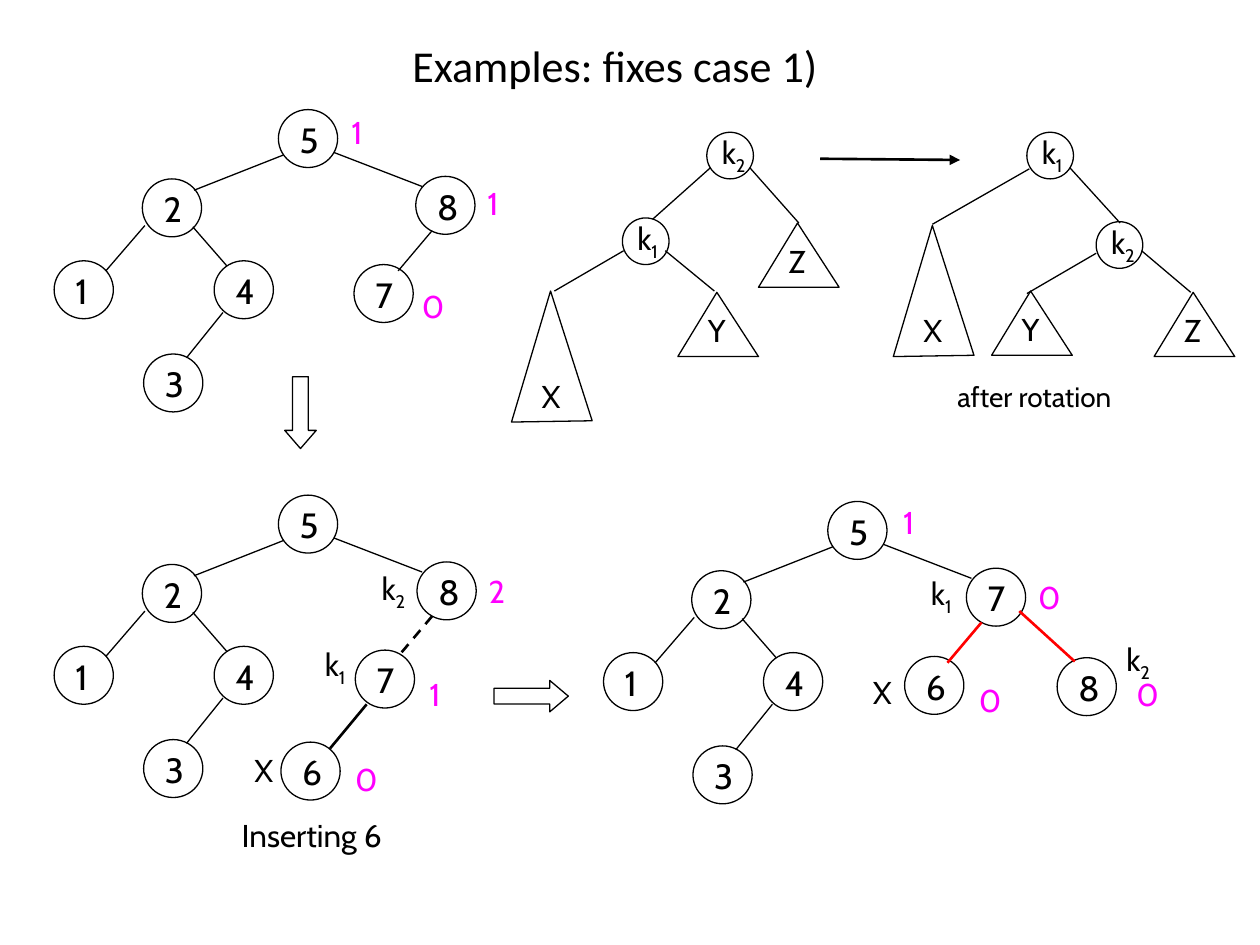
import pptx
import pptx.util
import pptx.dml.color
import pptx.enum.dml
import pptx.enum.shapes
import pptx.enum.text
import lxml.etree

KIND = pptx.enum.shapes.MSO_SHAPE
DASH = pptx.enum.dml.MSO_LINE.DASH
TEXT = pptx.enum.text
A = "{http://schemas.openxmlformats.org/drawingml/2006/main}"


class Theme:
    ink, mark, hot = "000000", "FF00FF", "FF0000"
    head, body = "Calibri", "Cabin"
    title, node, label, note = 25.2, 20, 18, 16
    thin, bold = 0.75, 1.5


# Grid: 100 columns by 75 rows, each cell a tenth of an inch
COLS, ROWS = 100, 75
CELL = pptx.util.Inches(0.1)

# Every search tree is placed by the top left corner of its root
LEFT = [("2", -10.8, 5.5), ("1", -17.8, 12), ("4", -5.1, 12), ("3", -10.7, 19.4)]
EDGES = [
    (-10.6, 9.2, -13.7, 12.8), (-6.8, 9.3, -4.1, 12.4), (-4.4, 16.1, -7.3, 19.7),
    (0.4, 3.6, -6.7, 6.4), (4.4, 3.4, 11.4, 6.1),
]
CHILD = (12.2, 9.6, 9.5, 12.8)


def grid(*cells):
    return [round(cell * CELL) for cell in cells]


def color(code):
    return pptx.dml.color.RGBColor.from_string(code)


def pen(line, code=Theme.ink, width=Theme.thin):
    line.color.rgb = color(code)
    line.width = pptx.util.Pt(width)


def hollow(shape):
    shape.shadow.inherit = False
    shape.fill.background()
    pen(shape.line)


def text(slide, words, x, y, w, h=4, size=Theme.label, code=Theme.ink,
         face=Theme.body, sub=""):
    box = slide.shapes.add_textbox(*grid(x, y, w, h))
    frame = box.text_frame
    frame.word_wrap = False
    frame.auto_size = TEXT.MSO_AUTO_SIZE.SHAPE_TO_FIT_TEXT
    para = frame.paragraphs[0]
    para.add_run().text = words
    para.font.size = pptx.util.Pt(size)
    para.font.name = face
    para.font.color.rgb = color(code)
    if sub:
        low = para.add_run()
        low.text = sub
        low._r.get_or_add_rPr().set("baseline", "-25000")
    return frame


def title(slide, words):
    frame = text(slide, words, 6.7, 3.3, 85, 3.7, Theme.title, face=Theme.head)
    frame.auto_size = TEXT.MSO_AUTO_SIZE.NONE
    frame.word_wrap = True
    frame.vertical_anchor = TEXT.MSO_ANCHOR.MIDDLE
    frame.paragraphs[0].alignment = TEXT.PP_ALIGN.CENTER


def edge(slide, x1, y1, x2, y2, code=Theme.ink, width=Theme.thin, dash=None,
         arrow=False):
    link = slide.shapes.add_connector(
        pptx.enum.shapes.MSO_CONNECTOR.STRAIGHT, *grid(x1, y1, x2, y2))
    pen(link.line, code, width)
    if dash:
        link.line.dash_style = dash
    if arrow:
        lxml.etree.SubElement(link.line._get_or_add_ln(), A + "tailEnd", type="triangle")
    lxml.etree.SubElement(link._element.spPr, A + "effectLst")


def shape(slide, kind, x, y, w, h, *adjust):
    item = slide.shapes.add_shape(kind, *grid(x, y, w, h))
    hollow(item)
    for spot, value in enumerate(adjust):
        item.adjustments[spot] = value


def node(slide, name, x, y):
    shape(slide, KIND.OVAL, x, y, 4.7, 4.6)
    text(slide, name, x + 0.7, y + 0.2, 3.5, 4.3, Theme.node)


def key(slide, sub, x, y):
    text(slide, "k", x, y, 4.2, sub=sub)


def knot(slide, sub, x, y):
    shape(slide, KIND.OVAL, x, y, 3.7, 3.7)
    key(slide, sub, x + 0.2, y - 0.4)


def wedge(slide, name, x, y, tall=5.1, tilt=0):
    pen_path = slide.shapes.build_freeform(*grid(x, y), scale=1.0)
    ends = [(x - 3.1, y + tall), (x + 3.3, y + tall - tilt)]
    pen_path.add_line_segments([grid(*end) for end in ends], close=True)
    hollow(pen_path.convert_to_shape())
    text(slide, name, x - 1.7, y + tall - 4.1, 3.5)


def tree(slide, x, y, right, links, marks):
    for name, dx, dy in [("5", 0, 0)] + LEFT + right:
        node(slide, name, x + dx, y + dy)
    styles = [(ends, {}) for ends in EDGES] + links
    for (x1, y1, x2, y2), style in styles:
        edge(slide, x + x1, y + y1, x + x2, y + y2, **style)
    for name, dx, dy in marks:
        text(slide, name, x + dx, y + dy, 3.4, code=Theme.mark)


def turn(slide, knots, wedges, links):
    for spot in knots:
        knot(slide, *spot)
    for spot in wedges:
        wedge(slide, *spot)
    for ends in links:
        edge(slide, *ends)


def main():
    deck = pptx.Presentation()
    deck.slide_width, deck.slide_height = grid(COLS, ROWS)
    slide = deck.slides.add_slide(deck.slide_layouts[6])
    title(slide, "Examples: fixes case 1) ")

    # Tree before the insertion
    tree(slide, 22.1, 8.7, [("8", 10.9, 5.3), ("7", 6, 12.3)], [(CHILD, {})],
         [("0", 10.4, 13.6), ("1", 15.6, 5.4), ("1", 4.8, -0.2)])
    shape(slide, KIND.DOWN_ARROW, 22.6, 29.9, 2.5, 5.7, 0.5, 0.575)

    # Tree with 6 inserted
    tree(slide, 22.1, 39.3,
         [("8", 11, 5.3), ("7", 6.1, 12.3), ("6", 0.2, 19.6)],
         [(CHILD, dict(width=Theme.bold, dash=DASH)),
          ((7, 16.6, 4.1, 20.1), dict(width=Theme.bold))],
         [("0", 5.1, 20.5), ("1", 11, 13.8), ("2", 15.7, 5.6)])
    key(slide, "2", 29.3, 44.7)
    key(slide, "1", 24.8, 50.7)
    text(slide, "X", 19.2, 59.1, 3.5)
    text(slide, "Inserting 6", 18.2, 64.3, 14)
    shape(slide, KIND.RIGHT_ARROW, 39.2, 54, 5.9, 2.5, 0.5, 0.589)

    # Tree after the rotation
    red = dict(code=Theme.hot, width=Theme.bold)
    tree(slide, 65.7, 39.8,
         [("7", 11, 5.3), ("6", 6.1, 12.3), ("8", 18.2, 12.4)],
         [(CHILD, red), ((15.2, 8.7, 19.6, 12.7), red)],
         [("0", 23.5, 13.3), ("0", 11, 13.8), ("0", 15.7, 5.6), ("1", 5, -0.4)])
    key(slide, "1", 72.9, 45.1)
    key(slide, "2", 88.4, 50.3)
    text(slide, "X", 68.3, 52.9, 3.5)

    # General rule: before and after
    turn(slide, [("2", 56.1, 10.5), ("1", 49.4, 17.3)],
         [("Y", 56.9, 23.2), ("Z", 63.3, 17.7), ("X", 43.7, 23.1, 10.4, 0.1)],
         [(49.5, 19.9, 44, 23.1), (52.8, 19.9, 56.7, 23.1),
          (56.4, 13.3, 51.8, 17.4), (59.5, 13.3, 63.4, 17.7)])
    edge(slide, 65.1, 12.6, 76.2, 12.7, width=Theme.bold, arrow=True)
    turn(slide, [("1", 81.5, 10.5), ("2", 87, 17.6)],
         [("Z", 94.7, 23.2), ("Y", 81.8, 23.1), ("X", 74, 17.9, 10.4, 0.1)],
         [(87, 20.1, 81.5, 23.3), (90.6, 19.9, 94.5, 23.2),
          (84.9, 13.3, 88.9, 17.7), (81.7, 13.4, 74, 17.8)])
    text(slide, "after rotation", 75, 29.6, 14.9, 3.7, Theme.note)

    deck.save("out.pptx")


if __name__ == "__main__":
    main()
